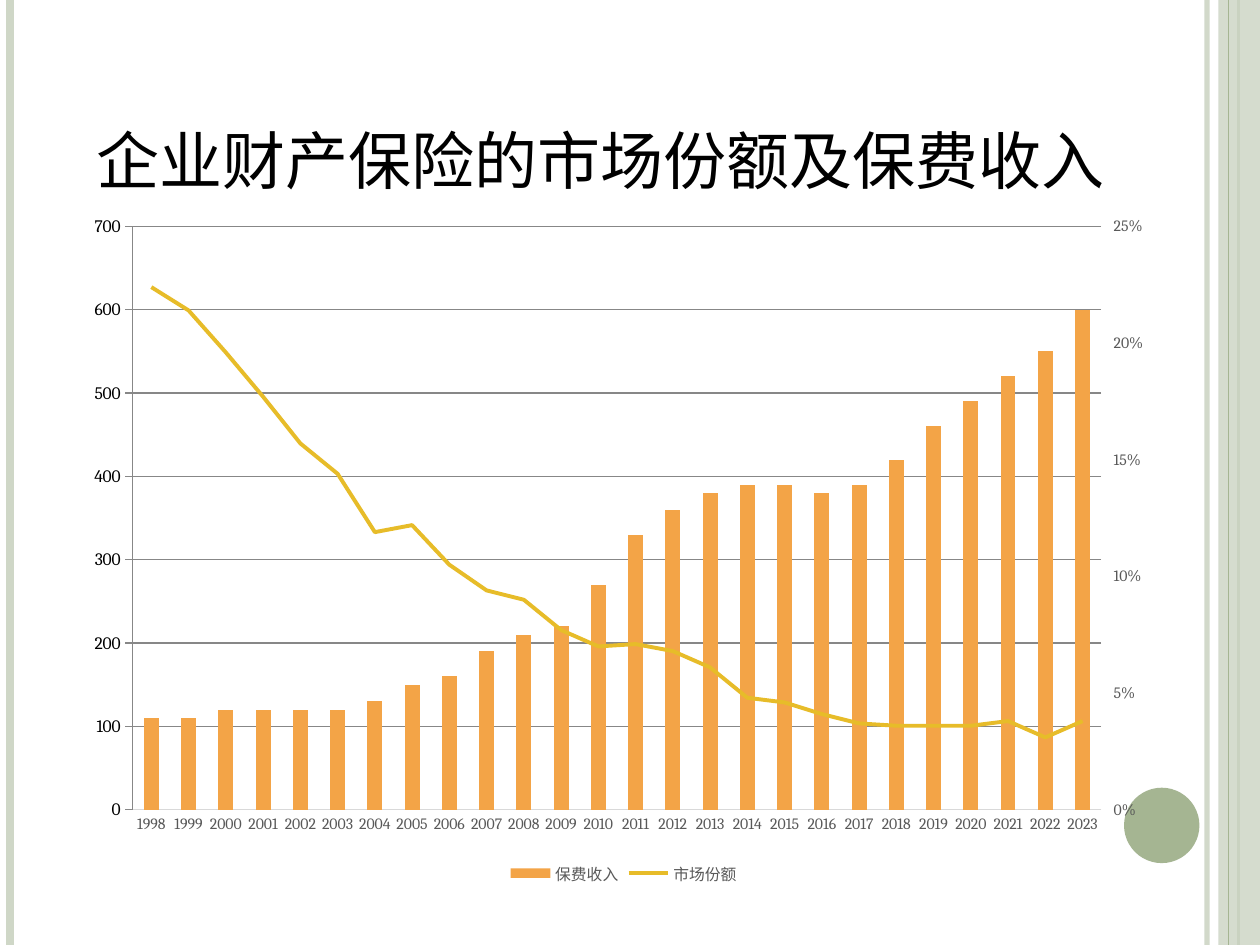
from copy import deepcopy
from dataclasses import dataclass

from lxml import etree
from pptx import Presentation
from pptx.chart.axis import ValueAxis
from pptx.chart.data import CategoryChartData
from pptx.dml.color import RGBColor
from pptx.enum.chart import XL_CHART_TYPE, XL_LEGEND_POSITION, XL_MARKER_STYLE, XL_TICK_MARK
from pptx.enum.shapes import MSO_CONNECTOR, MSO_SHAPE
from pptx.enum.text import MSO_ANCHOR
from pptx.oxml import parse_xml
from pptx.oxml.ns import nsdecls, qn
from pptx.util import Cm, Pt

COLUMN = XL_CHART_TYPE.COLUMN_CLUSTERED
LEGEND_BOTTOM = XL_LEGEND_POSITION.BOTTOM
NO_MARKER = XL_MARKER_STYLE.NONE
TICK_NONE = XL_TICK_MARK.NONE
TICK_OUTSIDE = XL_TICK_MARK.OUTSIDE
STRAIGHT = MSO_CONNECTOR.STRAIGHT
RECTANGLE = MSO_SHAPE.RECTANGLE
OVAL = MSO_SHAPE.OVAL
MIDDLE = MSO_ANCHOR.MIDDLE

COLORS = {
    "sage": "A5B592",
    "pale": "CFD7C7",
    "title": "000000",
    "label": "595959",
    "grid": "D9D9D9",
    "premium": "F3A447",
    "share": "E7BC29",
}
SLIDE_WIDTH, SLIDE_HEIGHT = 25.4, 19.05
CHART_FONT = "Cambria"
TITLE_FONT = "Times New Roman"
YEARS = [str(year) for year in range(1998, 2024)]
PREMIUMS = [110, 110, 120, 120, 120, 120, 130, 150, 160, 190, 210, 220, 270,
            330, 360, 380, 390, 390, 380, 390, 420, 460, 490, 520, 550, 600]
SHARES = [0.224, 0.214, 0.196, 0.177, 0.157, 0.144, 0.119, 0.122, 0.105,
          0.094, 0.09, 0.077, 0.07, 0.071, 0.068, 0.061, 0.048, 0.046, 0.041,
          0.037, 0.036, 0.036, 0.036, 0.038, 0.031, 0.038]
PLOT_LAYOUT = {"x": 0.047, "y": 0.033, "w": 0.894, "h": 0.851}


@dataclass
class Stripe:
    left: float
    weight: float
    color: str
    opacity: int = 100


@dataclass
class Block:
    kind: int
    left: float
    top: float
    width: float
    height: float
    color: str
    opacity: int = 100


DECORATIONS = [
    Stripe(24.33, 3, "pale", 93),
    Stripe(0.2, 4.5, "pale"),
    Stripe(24.97, 1.5, "sage"),
    Block(RECTANGLE, 24.56, 0, 0.84, SLIDE_HEIGHT, "pale", 87),
    Stripe(24.77, 0.75, "sage"),
    Block(OVAL, 22.66, 15.88, 1.52, 1.52, "sage"),
]


def color_of(name: str) -> RGBColor:
    return RGBColor.from_string(COLORS[name])


def set_opacity(shape, opacity: int) -> None:
    if opacity < 100:
        color = next(shape.element.spPr.iter(qn("a:srgbClr")))
        etree.SubElement(color, qn("a:alpha")).set("val", str(opacity * 1000))


def draw_stripe(slide, stripe: Stripe) -> None:
    left = Cm(stripe.left)
    connector = slide.shapes.add_connector(STRAIGHT, left, Cm(0), left, Cm(SLIDE_HEIGHT))
    connector.line.width = Pt(stripe.weight)
    connector.line.color.rgb = color_of(stripe.color)
    set_opacity(connector, stripe.opacity)
    etree.SubElement(connector.element.spPr, qn("a:effectLst"))


def draw_block(slide, block: Block) -> None:
    shape = slide.shapes.add_shape(
        block.kind, Cm(block.left), Cm(block.top), Cm(block.width), Cm(block.height))
    shape.shadow.inherit = False
    shape.fill.solid()
    shape.fill.fore_color.rgb = color_of(block.color)
    shape.line.fill.background()
    set_opacity(shape, block.opacity)


def draw_title(slide, text: str) -> None:
    box = slide.shapes.add_textbox(Cm(1.7), Cm(2.31), Cm(21.21), Cm(1.8))
    frame = box.text_frame
    frame.word_wrap = True
    frame.vertical_anchor = MIDDLE
    frame.text = text
    font = frame.paragraphs[0].runs[0].font
    font.size = Pt(36)
    font.name = TITLE_FONT
    font.color.rgb = color_of("title")


def style_font(font, size: float, color: str) -> None:
    font.size = Pt(size)
    font.name = CHART_FONT
    font.color.rgb = color_of(color)


def style_value_axis(axis, maximum: float, step: float, number_format: str, tick: int) -> None:
    axis.minimum_scale = 0
    axis.maximum_scale = maximum
    axis.major_unit = step
    axis.major_tick_mark = tick
    axis.tick_labels.number_format = number_format
    axis.tick_labels.number_format_is_linked = False
    axis.format.line.fill.background()
    style_font(axis.tick_labels.font, 9, "label")


def move_share_to_right_axis(chart) -> ValueAxis:
    plot_area = chart.element.chart.plotArea
    bar_chart = plot_area.find(qn("c:barChart"))
    share = bar_chart.findall(qn("c:ser"))[1]
    for invert in share.findall(qn("c:invertIfNegative")):
        share.remove(invert)
    line_chart = parse_xml(
        f'<c:lineChart {nsdecls("c")}><c:grouping val="standard"/><c:varyColors val="0"/>'
        '<c:marker val="1"/><c:axId val="5001"/><c:axId val="5002"/></c:lineChart>')
    line_chart.insert(2, share)
    bar_chart.addnext(line_chart)

    left_axis = plot_area.find(qn("c:valAx"))
    right_axis = deepcopy(left_axis)
    hidden_axis = deepcopy(plot_area.find(qn("c:catAx")))
    left_axis.addnext(right_axis)
    right_axis.addnext(hidden_axis)
    for axis, own, other in ((right_axis, "5002", "5001"), (hidden_axis, "5001", "5002")):
        axis.find(qn("c:axId")).set("val", own)
        axis.find(qn("c:crossAx")).set("val", other)
    right_axis.find(qn("c:axPos")).set("val", "r")
    right_axis.find(qn("c:crosses")).set("val", "max")
    hidden_axis.find(qn("c:delete")).set("val", "1")
    return ValueAxis(right_axis)


def set_plot_layout(chart) -> None:
    plot_area = chart.element.chart.plotArea
    for existing in plot_area.findall(qn("c:layout")):
        plot_area.remove(existing)
    modes = '<c:layoutTarget val="inner"/><c:xMode val="edge"/><c:yMode val="edge"/>'
    sizes = "".join(f'<c:{key} val="{value}"/>' for key, value in PLOT_LAYOUT.items())
    plot_area.insert(0, parse_xml(
        f'<c:layout {nsdecls("c")}><c:manualLayout>{modes}{sizes}</c:manualLayout></c:layout>'))


def draw_chart(slide) -> None:
    data = CategoryChartData()
    data.categories = YEARS
    data.add_series("保费收入", PREMIUMS, "0")
    data.add_series("市场份额", SHARES, "0.0%")
    chart = slide.shapes.add_chart(
        COLUMN, Cm(1.65), Cm(4.11), Cm(21.84), Cm(13.82), data).chart
    chart.has_title = False
    style_font(chart.font, 10, "title")
    right_axis = move_share_to_right_axis(chart)
    set_plot_layout(chart)

    bars, lines = chart.plots
    bars.vary_by_categories = False
    bars.gap_width = 150
    premium, share = bars.series[0], lines.series[0]
    premium.format.fill.solid()
    premium.format.fill.fore_color.rgb = color_of("premium")
    share.smooth = False
    share.marker.style = NO_MARKER
    share.format.line.width = Pt(2.25)
    share.format.line.color.rgb = color_of("share")

    category_axis, left_axis = chart.category_axis, chart.value_axis
    category_axis.major_tick_mark = TICK_NONE
    style_font(category_axis.tick_labels.font, 9, "label")
    style_value_axis(left_axis, 700, 100, "0", TICK_NONE)
    style_value_axis(right_axis, 0.25, 0.05, "0%", TICK_OUTSIDE)
    left_axis.has_major_gridlines = True
    right_axis.has_major_gridlines = False
    for line in (category_axis.format.line, left_axis.major_gridlines.format.line):
        line.width = Pt(0.75)
        line.color.rgb = color_of("grid")

    chart.has_legend = True
    chart.legend.position = LEGEND_BOTTOM
    chart.legend.include_in_layout = False
    style_font(chart.legend.font, 9, "label")


def main() -> None:
    presentation = Presentation()
    presentation.slide_width = Cm(SLIDE_WIDTH)
    presentation.slide_height = Cm(SLIDE_HEIGHT)
    slide = presentation.slides.add_slide(presentation.slide_layouts[6])
    for item in DECORATIONS:
        draw = draw_stripe if isinstance(item, Stripe) else draw_block
        draw(slide, item)
    draw_title(slide, "企业财产保险的市场份额及保费收入")
    draw_chart(slide)
    presentation.save("out.pptx")


if __name__ == "__main__":
    main()
